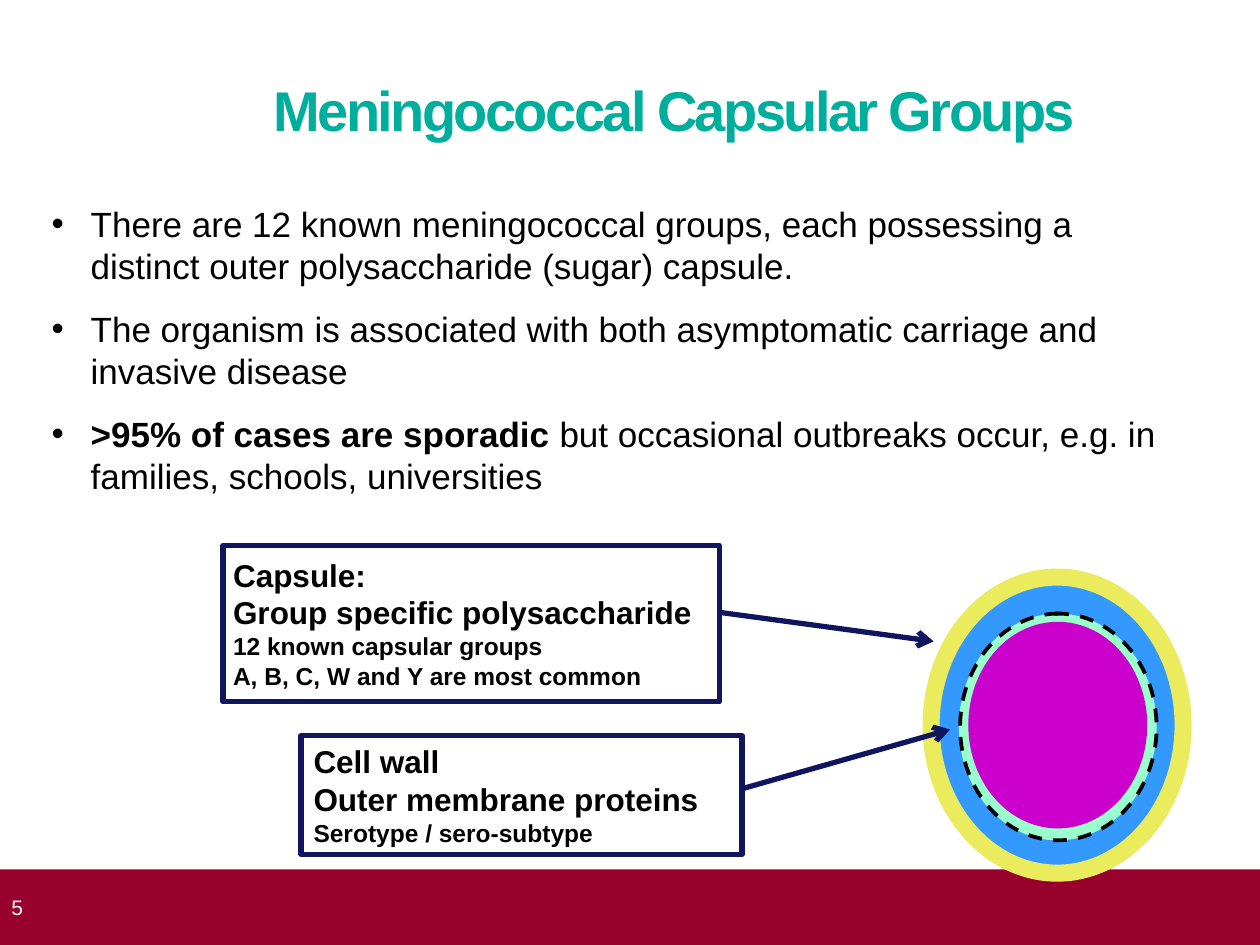
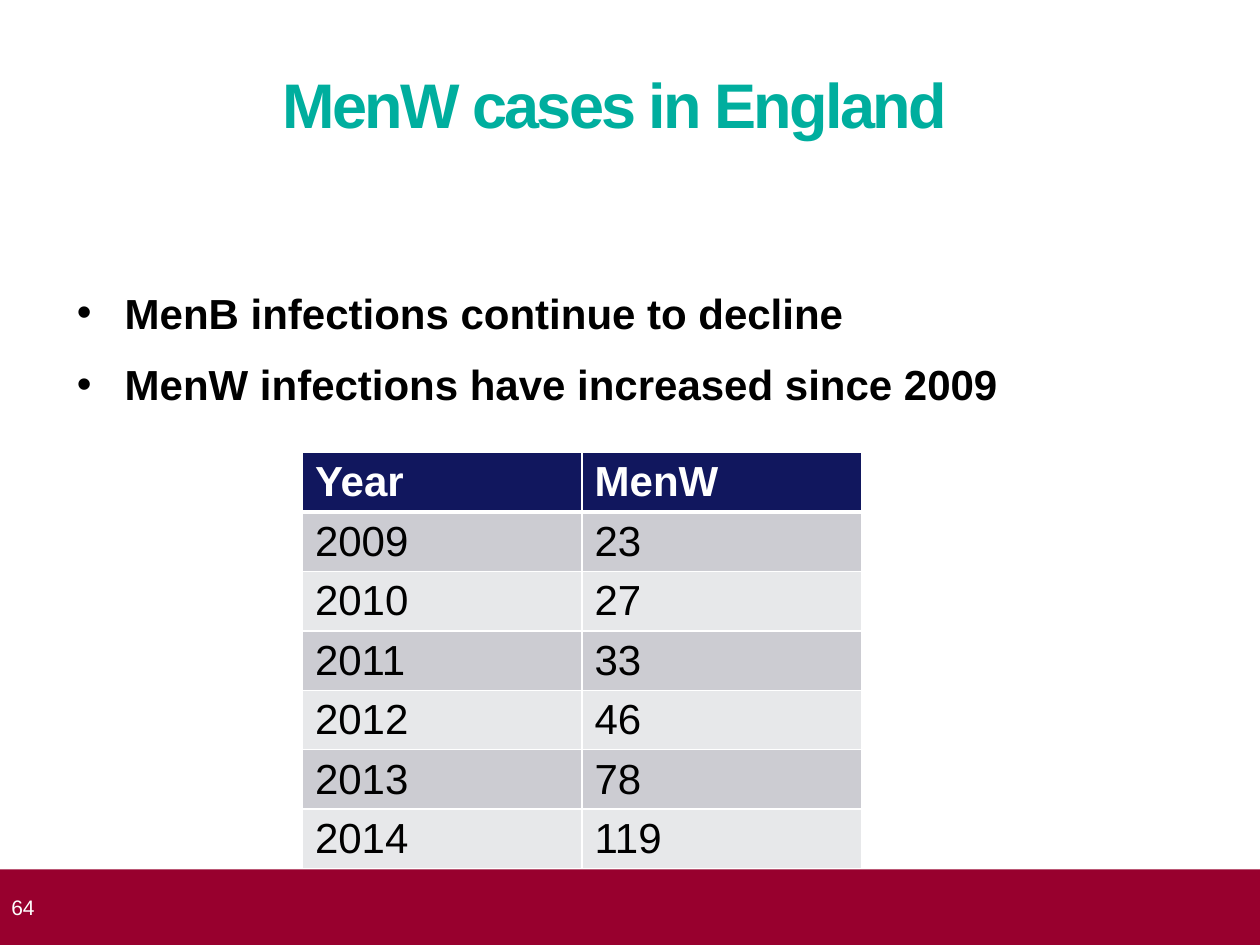
"""Build two slides on meningococcal capsular groups and MenW cases."""
import math
from dataclasses import dataclass
from typing import Optional

import pptx
import pptx.dml.color
import pptx.enum.shapes
import pptx.enum.text
import pptx.oxml
import pptx.oxml.ns
import pptx.util
from pptx.util import Inches

FONT = "Arial"
COLORS = {
    "title": "00AE9E", "band": "98002E", "text": "000000", "white": "FFFFFF",
    "navy": "11175E", "arrow": "0F155E", "odd_row": "CCCCD2", "even_row": "E7E8EA",
    "capsule": "EAEC5E", "wall": "3399FF", "membrane": "99FFCC", "core": "CC00CC",
}
MENW_CASES = [("Year", "MenW"), ("2009", "23"), ("2010", "27"), ("2011", "33"),
              ("2012", "46"), ("2013", "78"), ("2014", "119")]


@dataclass
class Box:
    left: float
    top: float
    width: float
    height: float

    def lengths(self) -> tuple:
        return tuple(Inches(v) for v in (self.left, self.top, self.width, self.height))


@dataclass
class Layer:
    box: Box
    fill: str
    line: Optional[str] = None
    line_width: float = 0


@dataclass
class DashRing:
    center: tuple[float, float]
    radii: tuple[float, float]
    thickness: float
    count: int
    dash: float
    period: float


@dataclass
class Label:
    box: Box
    inset: tuple[float, float]
    headings: list[str]
    details: list[str]


@dataclass
class Arrow:
    start: tuple[float, float]
    end: tuple[float, float]


@dataclass
class Bullet:
    text: str
    bold: str = ""


CAPSULE = Layer(Box(7.39, 4.58, 2, 2.35), "wall", "capsule", 9.75)
MEMBRANE = Layer(Box(7.61, 4.87, 1.57, 1.8), "membrane")
CORE = Layer(Box(7.69, 4.94, 1.41, 1.63), "core", "core", 0.75)
MEMBRANE_DASHES = DashRing((8.4, 5.77), (0.78, 0.9), 0.03, 27, 0.11, 0.2)
LABELS = [
    Label(Box(1.77, 4.33, 3.94, 1.24), (0.08, 0.08),
          ["Capsule:", "Group specific polysaccharide"],
          ["12 known capsular groups", "A, B, C, W and Y are most common"]),
    Label(Box(2.39, 5.84, 3.5, 0.94), (0.1, 0.05),
          ["Cell wall", "Outer membrane proteins"], ["Serotype / sero-subtype"]),
]
ARROWS = [Arrow((5.71, 4.86), (7.41, 5.09)), Arrow((5.89, 6.26), (7.54, 5.79))]


def rgb(name: str) -> pptx.dml.color.RGBColor:
    return pptx.dml.color.RGBColor.from_string(COLORS[name])


def style(run, size: float, color: str = "text", bold: bool = False) -> None:
    run.font.name = FONT
    run.font.size = pptx.util.Pt(size)
    run.font.bold = bold
    run.font.color.rgb = rgb(color)


def set_frame(frame, left: float = 0, top: float = 0, right: float = 0, bottom: float = 0,
              anchor=pptx.enum.text.MSO_ANCHOR.TOP) -> None:
    frame.word_wrap = True
    frame.auto_size = pptx.enum.text.MSO_AUTO_SIZE.NONE
    frame.vertical_anchor = anchor
    frame.margin_left, frame.margin_top = Inches(left), Inches(top)
    frame.margin_right, frame.margin_bottom = Inches(right), Inches(bottom)


def place(shape, box: Box) -> None:
    shape.left, shape.top, shape.width, shape.height = box.lengths()


def paint(shape, fill: str, line: Optional[str] = None, line_width: float = 0) -> None:
    shape.shadow.inherit = False
    shape.fill.solid()
    shape.fill.fore_color.rgb = rgb(fill)
    if line:
        shape.line.color.rgb = rgb(line)
        shape.line.width = pptx.util.Pt(line_width)
    else:
        shape.line.fill.background()


def add_rectangle(slide, box: Box, fill: str, line: Optional[str] = None,
                  line_width: float = 0):
    shape = slide.shapes.add_shape(pptx.enum.shapes.MSO_SHAPE.RECTANGLE, *box.lengths())
    paint(shape, fill, line, line_width)
    return shape


def add_title(slide, text: str, box: Box, size: float) -> None:
    title = slide.shapes.title
    place(title, box)
    set_frame(title.text_frame)
    title.text_frame.text = text
    heading = title.text_frame.paragraphs[0]
    heading.alignment = pptx.enum.text.PP_ALIGN.LEFT
    style(heading.runs[0], size, "title", bold=True)
    heading.runs[0]._r.get_or_add_rPr().set("spc", "-150")


def add_bullets(slide, bullets: list[Bullet], box: Box, size: float, indent: float) -> None:
    body = slide.placeholders[1]
    place(body, box)
    frame = body.text_frame
    set_frame(frame)
    for i, bullet in enumerate(bullets):
        paragraph = frame.paragraphs[0] if i == 0 else frame.add_paragraph()
        properties = paragraph._p.get_or_add_pPr()
        properties.set("marL", str(Inches(indent)))
        properties.set("indent", str(-Inches(indent)))
        mark = properties.makeelement(pptx.oxml.ns.qn("a:buChar"), {"char": "•"})
        properties.append(mark)
        paragraph.space_before = pptx.util.Pt(12 if i else 0)
        for text, bold in ((bullet.bold, True), (bullet.text, False)):
            if text:
                run = paragraph.add_run()
                run.text = text
                style(run, size, bold=bold)


def add_band(slide, number: int) -> None:
    band = add_rectangle(slide, Box(0, 6.9, 10, 0.6), "band")
    set_frame(band.text_frame, left=0.09, right=0.1, anchor=pptx.enum.text.MSO_ANCHOR.MIDDLE)
    band.text_frame.text = str(number)
    paragraph = band.text_frame.paragraphs[0]
    paragraph.alignment = pptx.enum.text.PP_ALIGN.LEFT
    style(paragraph.runs[0], 12, "white")


def add_layer(slide, layer: Layer) -> None:
    oval = slide.shapes.add_shape(pptx.enum.shapes.MSO_SHAPE.OVAL, *layer.box.lengths())
    paint(oval, layer.fill, layer.line, layer.line_width)


def ring_point(ring: DashRing, angle: float, offset: float) -> tuple:
    x = ring.center[0] - (ring.radii[0] + offset) * math.sin(angle)
    y = ring.center[1] - (ring.radii[1] + offset) * math.cos(angle)
    return Inches(x), Inches(y)


def advance(ring: DashRing, angle: float, distance: float, steps: int = 20) -> float:
    for _ in range(steps):
        speed = math.hypot(ring.radii[0] * math.cos(angle), ring.radii[1] * math.sin(angle))
        angle += distance / steps / speed
    return angle


def add_dash_ring(slide, ring: DashRing) -> None:
    angle, half = 0.0, ring.thickness / 2
    for _ in range(ring.count):
        stops = [angle, advance(ring, angle, ring.dash / 2), advance(ring, angle, ring.dash)]
        outline = [ring_point(ring, stop, half) for stop in stops]
        outline += [ring_point(ring, stop, -half) for stop in reversed(stops)]
        builder = slide.shapes.build_freeform(*outline[0])
        builder.add_line_segments(outline[1:], close=True)
        paint(builder.convert_to_shape(), "text")
        angle = advance(ring, angle, ring.period)


def add_label(slide, label: Label) -> None:
    shape = add_rectangle(slide, label.box, "white", "navy", 3)
    frame = shape.text_frame
    set_frame(frame, *label.inset, *label.inset)
    frame.text = "\n".join(label.headings + label.details)
    for i, paragraph in enumerate(frame.paragraphs):
        paragraph.alignment = pptx.enum.text.PP_ALIGN.LEFT
        style(paragraph.runs[0], 18 if i < len(label.headings) else 14, bold=True)


def add_arrow(slide, arrow: Arrow) -> None:
    ends = [Inches(v) for v in arrow.start + arrow.end]
    pointer = slide.shapes.add_connector(pptx.enum.shapes.MSO_CONNECTOR.STRAIGHT, *ends)
    pointer.line.color.rgb = rgb("arrow")
    pointer.line.width = pptx.util.Pt(3)
    line = pointer.line._get_or_add_ln()
    line.append(line.makeelement(pptx.oxml.ns.qn("a:tailEnd"), {"type": "arrow"}))
    properties = pointer._element.spPr
    properties.append(properties.makeelement(pptx.oxml.ns.qn("a:effectLst"), {}))


def set_borders(cell, top: float, bottom: float) -> None:
    properties = cell._tc.get_or_add_tcPr()
    for side, width in (("L", 1), ("R", 1), ("T", top), ("B", bottom)):
        properties.append(pptx.oxml.parse_xml(
            f'<a:ln{side} {pptx.oxml.ns.nsdecls("a")} w="{pptx.util.Pt(width)}"><a:solidFill>'
            f'<a:srgbClr val="{COLORS["white"]}"/></a:solidFill></a:ln{side}>'))


def add_cases_table(slide, rows: list[tuple[str, str]], box: Box) -> None:
    table = slide.shapes.add_table(len(rows), len(rows[0]), *box.lengths()).table
    table.horz_banding = False
    for r, values in enumerate(rows):
        table.rows[r].height = Inches(0.41)
        header = r == 0
        fill = "navy" if header else ("odd_row" if r % 2 else "even_row")
        for c, value in enumerate(values):
            cell = table.cell(r, c)
            set_borders(cell, 3 if r == 1 else 1, 3 if header else 1)
            cell.fill.solid()
            cell.fill.fore_color.rgb = rgb(fill)
            cell.text_frame.text = value
            style(cell.text_frame.paragraphs[0].runs[0], 24,
                  "white" if header else "text", bold=header)


def build_groups_slide(slide) -> None:
    add_title(slide, "Meningococcal Capsular Groups", Box(2.17, 0.6, 7.56, 0.71), 32)
    add_bullets(slide, [
        Bullet("There are 12 known meningococcal groups, each possessing a distinct outer "
               "polysaccharide (sugar) capsule."),
        Bullet("The organism is associated with both asymptomatic carriage and invasive disease"),
        Bullet("but occasional outbreaks occur, e.g. in families, schools, universities",
               bold=">95% of cases are sporadic "),
    ], Box(0.41, 1.61, 8.78, 4.72), 20, 0.31)
    add_band(slide, 5)
    add_layer(slide, CAPSULE)
    add_layer(slide, MEMBRANE)
    add_dash_ring(slide, MEMBRANE_DASHES)
    add_layer(slide, CORE)
    for label in LABELS:
        add_label(slide, label)
    for arrow in ARROWS:
        add_arrow(slide, arrow)


def build_cases_slide(slide) -> None:
    add_title(slide, "MenW cases in England", Box(2.24, 0.52, 8.78, 0.71), 36)
    add_bullets(slide, [
        Bullet("", bold="MenB infections continue to decline"),
        Bullet("", bold="MenW infections have increased since 2009"),
    ], Box(0.61, 2.28, 8.78, 1.15), 24, 0.38)
    add_band(slide, 64)
    add_cases_table(slide, MENW_CASES, Box(2.4, 3.59, 4.44, 2.87))


def main() -> None:
    deck = pptx.Presentation()
    deck.slide_width, deck.slide_height = Inches(10), Inches(7.5)
    for build in (build_groups_slide, build_cases_slide):
        build(deck.slides.add_slide(deck.slide_layouts[1]))
    deck.save("out.pptx")


if __name__ == "__main__":
    main()
